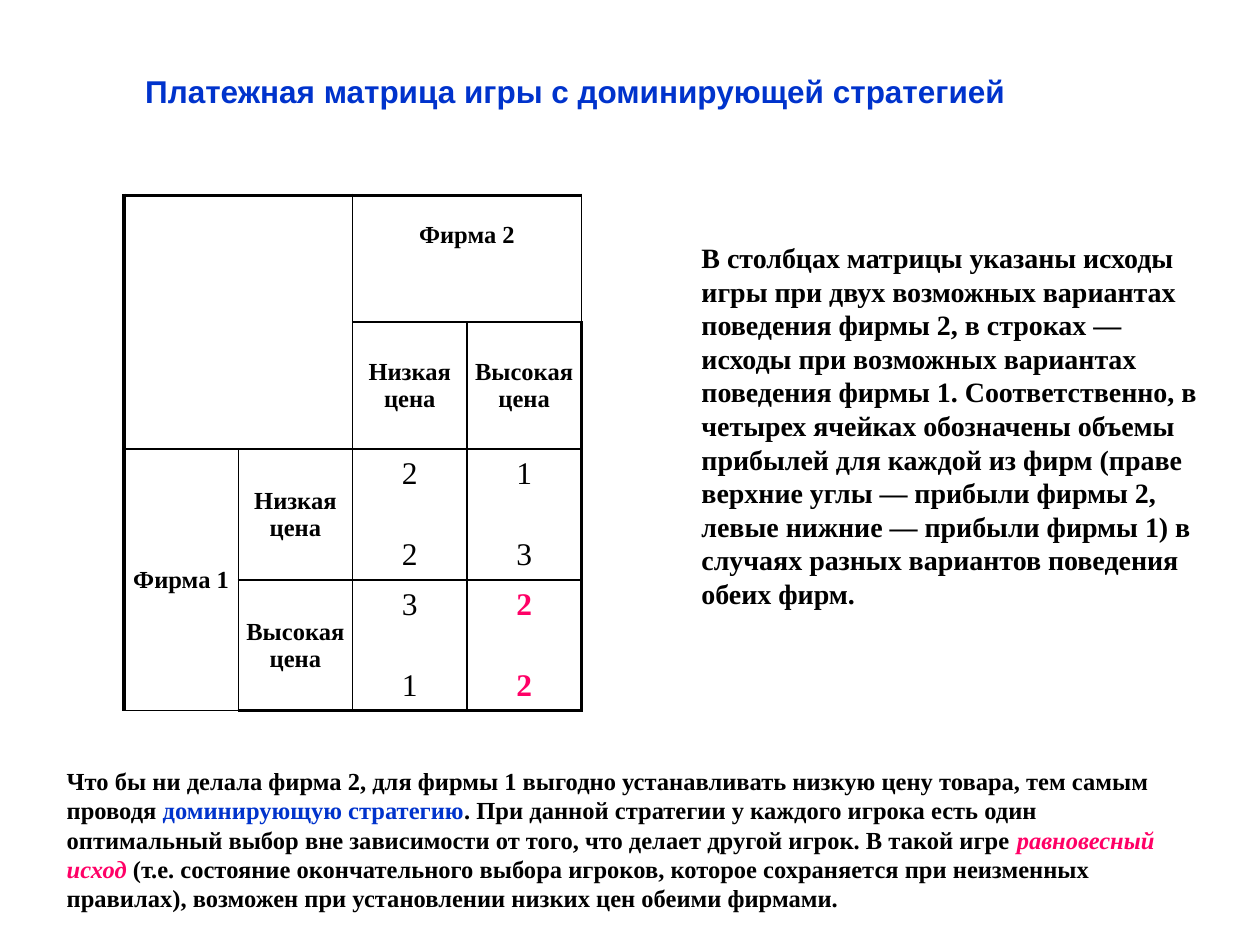
from dataclasses import dataclass

from lxml.etree import fromstring
from pptx import Presentation
from pptx.dml.color import RGBColor
from pptx.enum.text import MSO_ANCHOR, MSO_AUTO_SIZE, PP_ALIGN
from pptx.oxml.ns import nsdecls
from pptx.util import Pt


@dataclass(frozen=True)
class Theme:
    heading_font: str = "Arial"
    body_font: str = "Times New Roman"
    ink: str = "000000"
    blue: str = "0033CC"
    pink: str = "FF0066"
    title_size: int = 18
    payoff_size: int = 18
    comment_size: int = 16
    text_size: int = 14
    outer_line: float = 2.25
    inner_line: float = 1
    cell_margin: float = 1.5
    payoff_gap: float = 26


THEME = Theme()

TITLE = "Платежная матрица игры с доминирующей стратегией"
COMMENT = (
    "В столбцах матрицы указаны исходы игры при двух возможных вариантах "
    "поведения фирмы 2, в строках — исходы при возможных вариантах поведения "
    "фирмы 1. Соответственно, в четырех ячейках обозначены объемы прибылей для "
    "каждой из фирм (праве верхние углы — прибыли фирмы 2, левые нижние — "
    "прибыли фирмы 1) в случаях разных вариантов поведения обеих фирм."
)
CONCLUSION = [
    ("Что бы ни делала фирма 2, для фирмы 1 выгодно устанавливать низкую цену "
     "товара, тем самым проводя ", {}),
    ("доминирующую стратегию", {"color": THEME.blue}),
    (". При данной стратегии у каждого игрока есть один оптимальный выбор вне "
     "зависимости от того, что делает другой игрок. В такой игре ", {}),
    ("равновесный исход", {"color": THEME.pink, "italic": True}),
    (" (т.е. состояние окончательного выбора игроков, которое сохраняется при "
     "неизменных правилах), возможен при установлении низких цен обеими фирмами.", {}),
]

PRICES = ["Низкая цена", "Высокая цена"]
# Each pair is the profit of firm 2, then that of firm 1.
PAYOFFS = [[("2", "2"), ("1", "3")], [("3", "1"), ("2", "2")]]
EQUILIBRIUM = (1, 1)
COLUMN_WIDTH = 65.35
ROW_HEIGHTS = [72.5, 72.5, 74.8, 74.8]
FIRM_2_LIFT = 28


def add_run(paragraph, text, *, font=THEME.body_font, size=THEME.text_size,
            color=THEME.ink, bold=True, italic=False):
    run = paragraph.add_run()
    run.text = text
    run.font.name = font
    run.font.size = Pt(size)
    run.font.bold = bold
    run.font.italic = italic
    run.font.color.rgb = RGBColor.from_string(color)


class GameSlide:
    def __init__(self, presentation, theme):
        self.theme = theme
        self.slide = presentation.slides.add_slide(presentation.slide_layouts[5])

    def place_title(self, text, left, top, width, height):
        title = self.slide.shapes.title
        title.left, title.top, title.width, title.height = map(Pt, (left, top, width, height))
        frame = title.text_frame
        frame.word_wrap = True
        frame.auto_size = MSO_AUTO_SIZE.SHAPE_TO_FIT_TEXT
        frame.vertical_anchor = MSO_ANCHOR.TOP
        heading = frame.paragraphs[0]
        heading.alignment = PP_ALIGN.CENTER
        add_run(heading, text, font=self.theme.heading_font,
                size=self.theme.title_size, color=self.theme.blue)

    def add_text(self, runs, left, top, width, height):
        """Add one wrapped paragraph made of (text, format) pairs."""
        frame = self.slide.shapes.add_textbox(*map(Pt, (left, top, width, height))).text_frame
        frame.word_wrap = True
        frame.auto_size = MSO_AUTO_SIZE.SHAPE_TO_FIT_TEXT
        for text, style in runs:
            add_run(frame.paragraphs[0], text, **style)

    def add_matrix(self, left, top, column_width, row_heights):
        size = len(row_heights)
        matrix = self.slide.shapes.add_table(
            size, size, Pt(left), Pt(top), Pt(size * column_width), Pt(sum(row_heights))
        ).table
        matrix.first_row = matrix.horz_banding = False
        for column in matrix.columns:
            column.width = Pt(column_width)
        for row, height in zip(matrix.rows, row_heights):
            row.height = Pt(height)
        for r in range(size):
            for c in range(size):
                cell = matrix.cell(r, c)
                cell.fill.background()
                cell.vertical_anchor = MSO_ANCHOR.MIDDLE
                cell.margin_left = cell.margin_right = Pt(self.theme.cell_margin)
                cell.margin_top = cell.margin_bottom = Pt(self.theme.cell_margin)
                self.draw_borders(cell, L=c == 0, R=c == size - 1, T=r == 0, B=r == size - 1)
        return matrix

    def draw_borders(self, cell, **outer_sides):
        """Line each side, heavier where the side lies on the table's edge."""
        properties = cell._tc.get_or_add_tcPr()
        for position, (side, is_outer) in enumerate(outer_sides.items()):
            width = self.theme.outer_line if is_outer else self.theme.inner_line
            properties.insert(position, fromstring(
                f'<a:ln{side} {nsdecls("a")} w="{Pt(width)}"><a:solidFill>'
                f'<a:srgbClr val="{self.theme.ink}"/></a:solidFill></a:ln{side}>'))

    def fill_cell(self, cell, lines, gap=0, **style):
        """Write centred paragraphs, with gap points between them."""
        for index, line in enumerate(lines):
            frame = cell.text_frame
            paragraph = frame.add_paragraph() if index else frame.paragraphs[0]
            paragraph.alignment = PP_ALIGN.CENTER
            if index:
                paragraph.space_before = Pt(gap)
            add_run(paragraph, line, **style)


def fill_matrix(page, matrix):
    theme = page.theme
    matrix.cell(0, 0).merge(matrix.cell(1, 1))
    matrix.cell(0, 2).merge(matrix.cell(0, 3))
    matrix.cell(2, 0).merge(matrix.cell(3, 0))
    page.fill_cell(matrix.cell(0, 2), ["Фирма 2"])
    matrix.cell(0, 2).margin_bottom = Pt(FIRM_2_LIFT)
    page.fill_cell(matrix.cell(2, 0), ["Фирма 1"])
    for i, price in enumerate(PRICES):
        page.fill_cell(matrix.cell(1, 2 + i), [price])
        page.fill_cell(matrix.cell(2 + i, 1), [price])
        for j, profits in enumerate(PAYOFFS[i]):
            is_equilibrium = (i, j) == EQUILIBRIUM
            page.fill_cell(matrix.cell(2 + i, 2 + j), profits, gap=theme.payoff_gap,
                           size=theme.payoff_size, bold=is_equilibrium,
                           color=theme.pink if is_equilibrium else theme.ink)


def main():
    presentation = Presentation()
    presentation.slide_width, presentation.slide_height = Pt(720), Pt(540)
    page = GameSlide(presentation, THEME)
    page.place_title(TITLE, 42.5, 37.5, 572.5, 29)
    fill_matrix(page, page.add_matrix(70.8, 111.6, COLUMN_WIDTH, ROW_HEIGHTS))
    page.add_text([(COMMENT, {"size": THEME.comment_size})], 393.8, 134, 300.2, 219)
    page.add_text(CONCLUSION, 31, 434, 658, 91)
    presentation.save("out.pptx")


if __name__ == "__main__":
    main()
